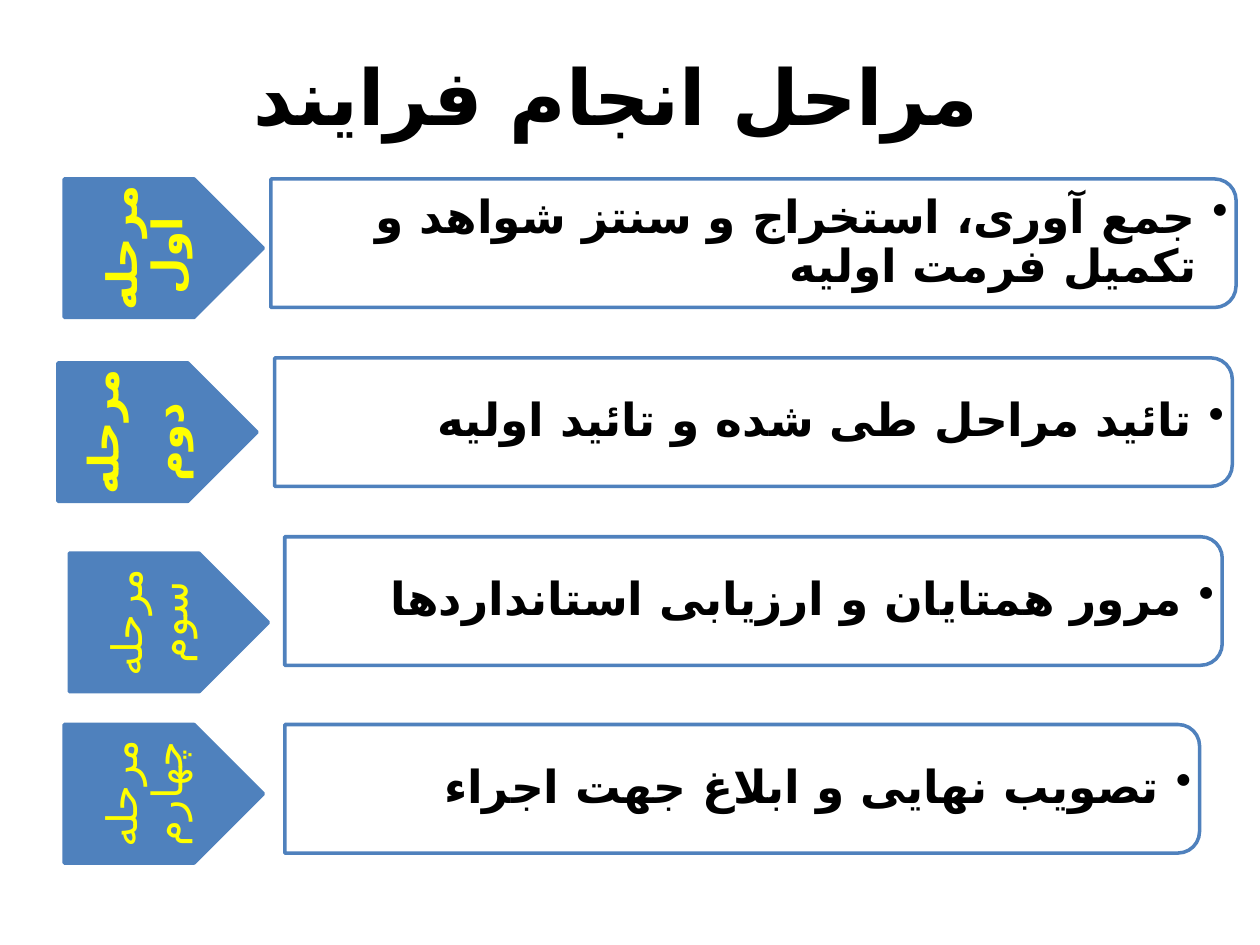
from lxml.etree import SubElement
from pptx import Presentation
from pptx.dml.color import RGBColor
from pptx.enum.shapes import MSO_SHAPE
from pptx.enum.text import MSO_ANCHOR, PP_ALIGN
from pptx.oxml.ns import qn
from pptx.util import Inches, Pt

BLUE = RGBColor(0x4F, 0x81, 0xBD)
WHITE = RGBColor(0xFF, 0xFF, 0xFF)
BLACK = RGBColor(0, 0, 0)
YELLOW = RGBColor(0xFF, 0xFF, 0)

deck = Presentation()
deck.slide_width = Inches(10)
deck.slide_height = Inches(7.5)
slide = deck.slides.add_slide(deck.slide_layouts[6])


def add_text(box, runs, align, inset=None):
    shape = slide.shapes.add_textbox(*[Inches(n) for n in box])
    frame = shape.text_frame
    frame.word_wrap = True
    frame.vertical_anchor = MSO_ANCHOR.MIDDLE
    if inset:
        frame.margin_left = Inches(inset)
        frame.margin_right = frame.margin_top = frame.margin_bottom = Inches(0.02)
    para = frame.paragraphs[0]
    para.alignment = align
    for words, size, color, bold in runs:
        run = para.add_run()
        run.text = words
        run.font.size = Pt(size)
        run.font.bold = bold
        run.font.name = "Calibri"
        run.font.color.rgb = color
        SubElement(run.font._element, qn("a:cs"), typeface="DejaVu Sans")
    return shape, para


def add_block(kind, box, fill):
    shape = slide.shapes.add_shape(kind, *[Inches(n) for n in box])
    shape.shadow.inherit = False
    shape.fill.solid()
    shape.fill.fore_color.rgb = fill
    shape.line.color.rgb = BLUE
    shape.line.width = Pt(2)
    return shape


add_text((0.5, 0.25, 9, 1), [("مراحل انجام فرایند ", 44, BLACK, True)], PP_ALIGN.CENTER)

steps = [
    (0.51, 1.42, 5.98, 1.93, 7.66, [("مرحله اول ", 24, YELLOW, True)],
     "جمع آوری، استخراج و سنتز شواهد و تکمیل فرمت اولیه"),
    (0.46, 2.88, 5.98, 3.35, 7.6,
     [("مرحله دوم", 24, YELLOW, True), (" ", 37, WHITE, False)],
     "تائید مراحل طی شده و تائید اولیه "),
    (0.55, 4.39, 5.98, 4.77, 7.44, [("مرحله سوم", 24, YELLOW, False)],
     "مرور همتایان و ارزیابی استانداردها "),
    (0.51, 5.75, 5.89, 6.26, 7.26, [("مرحله چهارم", 24, YELLOW, False)],
     "تصویب نهایی و ابلاغ جهت اجراء"),
]
high = 1.02

for left, top, mid_x, mid_y, wide, name, task in steps:
    add_block(MSO_SHAPE.PENTAGON, (left, top, 1.58, 1.1), BLUE)
    label, para = add_text((left + 0.1, top - 0.1, 1.1, 1.3), name, PP_ALIGN.CENTER, 0.02)
    label.rotation = 270
    para.line_spacing = 0.9
    para.space_after = Pt(8.4)

    panel = add_block(MSO_SHAPE.ROUND_2_SAME_RECTANGLE,
                      (mid_x - high / 2, mid_y - wide / 2, high, wide), WHITE)
    panel.rotation = 90
    tint = panel.fill._xPr.find(qn("a:solidFill"))[0]
    SubElement(tint, qn("a:alpha"), val="90000")

    box = (mid_x - wide / 2 + 0.01, mid_y - 0.46, wide - 0.05, 0.92)
    note, para = add_text(box, [(task, 26, BLACK, True)], PP_ALIGN.RIGHT, 0.2)
    para.level = 1
    para.line_spacing = 0.9
    para.space_after = Pt(3.9)
    props = para._p.get_or_add_pPr()
    props.set("rtl", "1")
    props.set("marL", str(Inches(0.25)))
    props.set("indent", str(Inches(-0.25)))
    SubElement(props, qn("a:buChar"), char="•")

deck.save("out.pptx")
